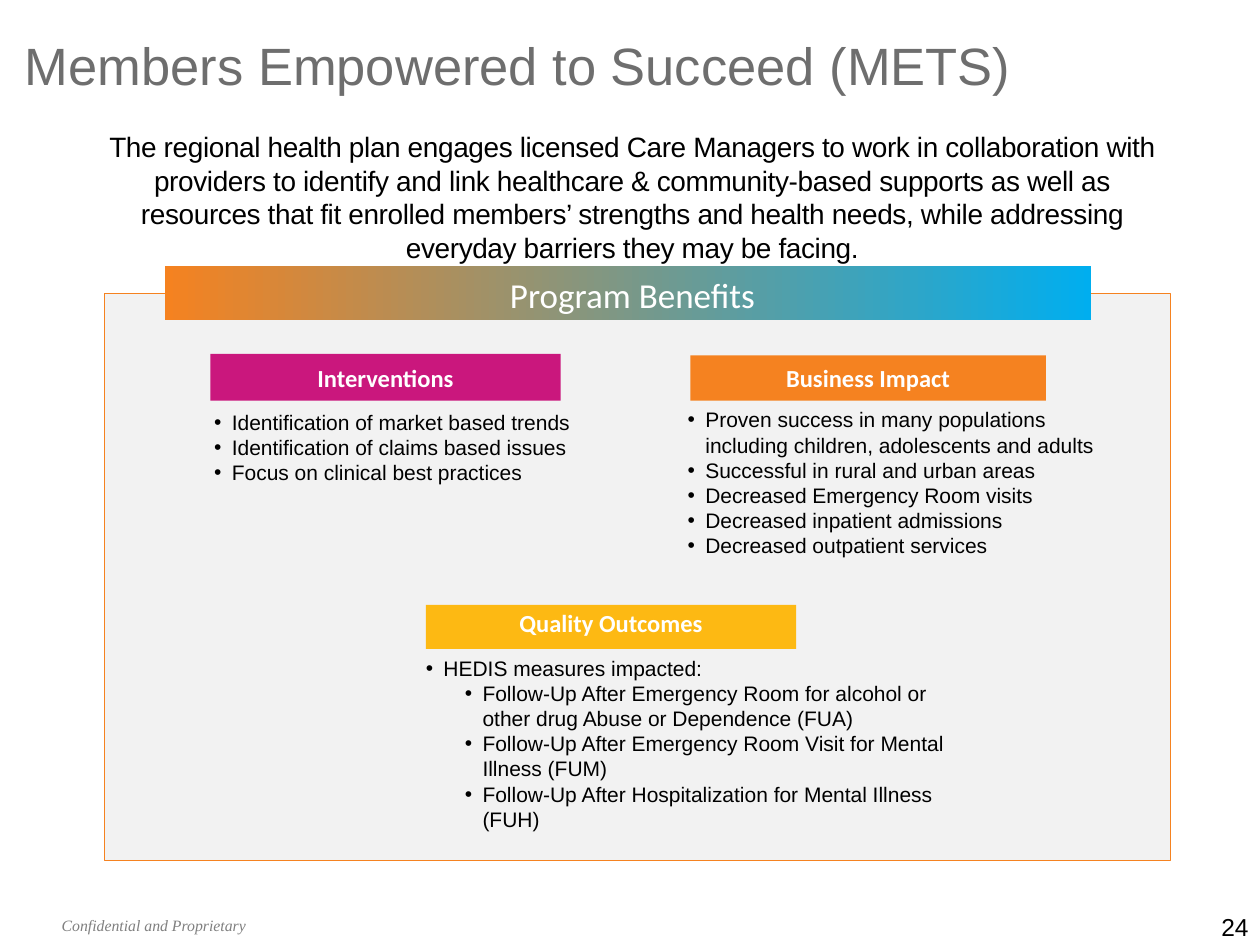
from pptx import Presentation
from pptx.dml.color import RGBColor
from pptx.enum.shapes import MSO_SHAPE
from pptx.enum.text import MSO_ANCHOR, PP_ALIGN
from pptx.oxml.ns import qn
from pptx.util import Inches, Pt
from lxml.etree import SubElement

COLORS = {
    "title": "6E6E6E",
    "footer": "808080",
    "text": "000000",
    "white": "FFFFFF",
    "panel": "F2F2F2",
    "orange": "F58220",
    "blue": "00AEEF",
    "yellow": "FDB913",
    "magenta": "CA177D",
}


class SlideBuilder:
    def __init__(self, slide):
        self.slide = slide
        self.body_font = "Arial"
        self.heading_font = "Calibri"

    def color(self, name):
        return RGBColor.from_string(COLORS[name])

    def style(self, paragraph, size, color="text", font=None, bold=False, italic=False):
        for run in paragraph.runs:
            run.font.size = Pt(size)
            run.font.name = font or self.body_font
            run.font.bold = bold
            run.font.italic = italic
            run.font.color.rgb = self.color(color)

    def frame(self, box, inset):
        shape = self.slide.shapes.add_textbox(*map(Inches, box))
        text_frame = shape.text_frame
        text_frame.word_wrap = True
        if not inset:
            text_frame.margin_left = text_frame.margin_right = 0
            text_frame.margin_top = text_frame.margin_bottom = 0
        return text_frame

    def text(self, box, text, size, align=PP_ALIGN.LEFT, anchor=MSO_ANCHOR.TOP,
             inset=False, spacing=None, **style):
        text_frame = self.frame(box, inset)
        text_frame.vertical_anchor = anchor
        text_frame.text = text
        paragraph = text_frame.paragraphs[0]
        paragraph.alignment = align
        self.style(paragraph, size, **style)
        if spacing is not None:
            for run in paragraph.runs:
                run.font._element.set("spc", str(spacing))

    def bullets(self, box, items, inset=False):
        text_frame = self.frame(box, inset)
        for index, (level, text) in enumerate(items):
            paragraph = text_frame.paragraphs[0] if index == 0 else text_frame.add_paragraph()
            paragraph.text = text
            paragraph.level = level
            properties = paragraph._p.get_or_add_pPr()
            properties.set("marL", str(Inches((0.14, 0.45)[level])))
            properties.set("indent", str(Inches(-0.14)))
            SubElement(properties, qn("a:buFont")).set("typeface", self.body_font)
            SubElement(properties, qn("a:buChar")).set("char", "•")
            self.style(paragraph, 12)

    def rectangle(self, box, fill, line=None):
        shape = self.slide.shapes.add_shape(MSO_SHAPE.RECTANGLE, *map(Inches, box))
        shape.shadow.inherit = False
        shape.fill.solid()
        shape.fill.fore_color.rgb = self.color(fill)
        if line:
            shape.line.color.rgb = self.color(line)
            shape.line.width = Pt(0.25)
        else:
            shape.line.fill.background()
        return shape

    def gradient_banner(self, box, start, end):
        fill = self.rectangle(box, start).fill
        fill.gradient()
        fill.gradient_angle = 0
        for stop, position, name in zip(fill.gradient_stops, (0, 1), (start, end)):
            stop.position = position
            stop.color.rgb = self.color(name)

    def heading(self, box, text, fill, line_spacing=None):
        text_frame = self.rectangle(box, fill).text_frame
        text_frame.vertical_anchor = MSO_ANCHOR.MIDDLE
        text_frame.text = text
        paragraph = text_frame.paragraphs[0]
        paragraph.alignment = PP_ALIGN.CENTER
        paragraph.line_spacing = line_spacing
        self.style(paragraph, 14, "white", self.heading_font, bold=True)


def main():
    presentation = Presentation()
    presentation.slide_width = Inches(10)
    presentation.slide_height = Inches(7.5)
    builder = SlideBuilder(presentation.slides.add_slide(presentation.slide_layouts[6]))

    builder.text((0.1, 0.18, 8.07, 0.67), "Members Empowered to Succeed (METS)", 30,
                 anchor=MSO_ANCHOR.MIDDLE, inset=True, color="title")
    builder.text((0.49, 7.27, 3.56, 0.2), "Confidential and Proprietary", 9,
                 color="footer", font="Times New Roman", italic=True)
    builder.text(
        (0.75, 1.03, 8.54, 1.08),
        "The regional health plan engages licensed Care Managers to work in collaboration "
        "with providers to identify and link healthcare & community-based supports as well as "
        "resources that fit enrolled members’ strengths and health needs, while addressing "
        "everyday barriers they may be facing.",
        16, align=PP_ALIGN.CENTER, spacing=-20)

    builder.rectangle((0.83, 2.33, 8.46, 4.5), "panel", line="orange")
    builder.gradient_banner((1.31, 2.11, 7.35, 0.43), "orange", "blue")
    builder.text((3.38, 2.17, 3.28, 0.34), "Program Benefits", 20, align=PP_ALIGN.CENTER,
                 anchor=MSO_ANCHOR.MIDDLE, inset=True, color="white", font=builder.heading_font)

    builder.heading((1.67, 2.81, 2.78, 0.37), "Interventions", "magenta")
    builder.bullets((1.7, 3.25, 3.32, 0.85), [
        (0, "Identification of market based trends"),
        (0, "Identification of claims based issues"),
        (0, "Focus on clinical best practices"),
    ])

    builder.heading((5.48, 2.82, 2.82, 0.36), "Business Impact", "orange")
    builder.bullets((5.36, 3.18, 3.46, 1.49), [
        (0, "Proven success in many populations including children, adolescents and adults"),
        (0, "Successful in rural and urban areas"),
        (0, "Decreased Emergency Room visits"),
        (0, "Decreased inpatient admissions"),
        (0, "Decreased outpatient services"),
    ], inset=True)

    builder.heading((3.38, 4.8, 2.94, 0.35), "Quality Outcomes", "yellow", Pt(12))
    builder.bullets((3.38, 5.2, 4.2, 1.41), [
        (0, "HEDIS measures impacted:"),
        (1, "Follow-Up After Emergency Room for alcohol or other drug Abuse or Dependence (FUA)"),
        (1, "Follow-Up After Emergency Room Visit for Mental Illness (FUM)"),
        (1, "Follow-Up After Hospitalization for Mental Illness (FUH)"),
    ])

    builder.text((7.58, 7.24, 2.33, 0.26), "24", 14, align=PP_ALIGN.RIGHT)
    presentation.save("out.pptx")


if __name__ == "__main__":
    main()
